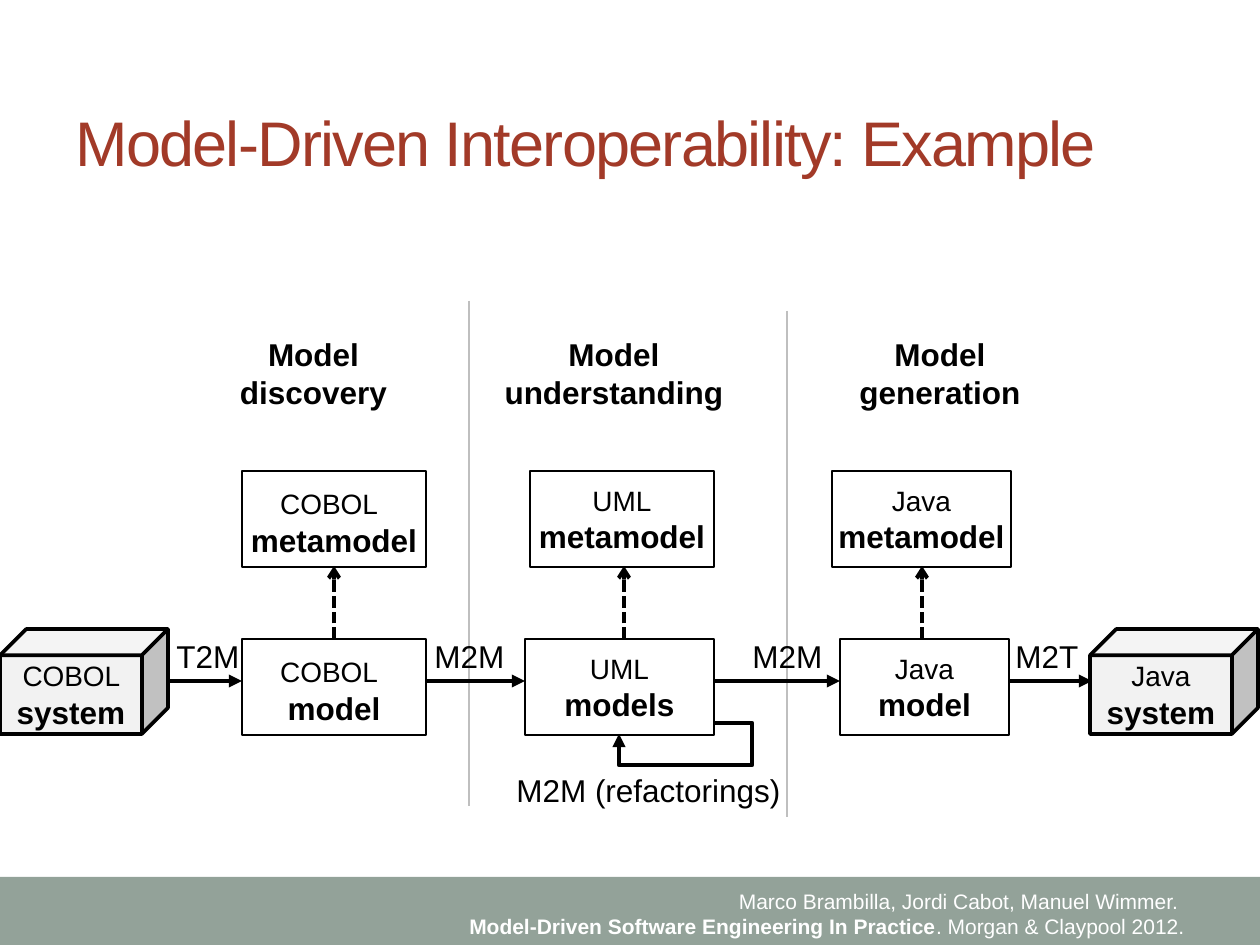
from dataclasses import dataclass

from lxml import etree
from pptx import Presentation
from pptx.dml.color import RGBColor
from pptx.enum.dml import MSO_LINE
from pptx.enum.shapes import MSO_CONNECTOR, MSO_SHAPE
from pptx.enum.text import MSO_ANCHOR, PP_ALIGN
from pptx.oxml.ns import qn
from pptx.util import Pt

RECTANGLE, CUBE = MSO_SHAPE.RECTANGLE, MSO_SHAPE.CUBE
STRAIGHT = MSO_CONNECTOR.STRAIGHT
DASHED = MSO_LINE.SQUARE_DOT
LEFT, CENTER, RIGHT = PP_ALIGN.LEFT, PP_ALIGN.CENTER, PP_ALIGN.RIGHT
TOP, MIDDLE = MSO_ANCHOR.TOP, MSO_ANCHOR.MIDDLE
EMU_PER_PX = 914400 / 126


@dataclass(frozen=True)
class Theme:
    font: str = "Arial"
    ink: str = "000000"
    paper: str = "FFFFFF"
    title: str = "A23A28"
    band: str = "93A299"
    divider: str = "BFBFBF"
    cube: str = "F2F2F2"
    title_size: int = 36
    gap_size: int = 20
    label_size: int = 18
    name_size: int = 16
    footer_size: int = 12


def px(length):
    return round(length * EMU_PER_PX)


def color(value):
    return RGBColor.from_string(value)


def write(frame, paragraphs, *, font, size, ink, align=LEFT, anchor=TOP,
          bold=False, wrap=True, spacing=None):
    frame.word_wrap = wrap
    frame.vertical_anchor = anchor
    for index, spans in enumerate(paragraphs):
        para = frame.add_paragraph() if index else frame.paragraphs[0]
        para.alignment = align
        for text, span_size, span_bold in spans:
            span = para.add_run()
            span.text = text
            span.font.name = font
            span.font.size = Pt(span_size or size)
            span.font.bold = bold if span_bold is None else span_bold
            span.font.color.rgb = color(ink)
            if spacing is not None:
                span.font._element.set("spc", str(spacing))


def plain(text, size=None, bold=None):
    return (text, size, bold)


class Page:
    def __init__(self, slide, theme):
        self.shapes = slide.shapes
        self.theme = theme

    def text(self, left, top, width, height, paragraphs, **style):
        box = self.shapes.add_textbox(px(left), px(top), px(width), px(height))
        settings = {"font": self.theme.font, "size": self.theme.label_size,
                    "ink": self.theme.ink, **style}
        write(box.text_frame, paragraphs, **settings)

    def shape(self, kind, left, top, width, height, fill, outline=None):
        shape = self.shapes.add_shape(kind, px(left), px(top), px(width), px(height))
        shape.shadow.inherit = False
        shape.fill.solid()
        shape.fill.fore_color.rgb = color(fill)
        if outline:
            shape.line.color.rgb = color(self.theme.ink)
            shape.line.width = Pt(outline)
        else:
            shape.line.fill.background()
        return shape

    def node(self, left, top, width, paragraphs):
        shape = self.shape(RECTANGLE, left, top, width, 96, self.theme.paper, 1.5)
        write(shape.text_frame, paragraphs, font=self.theme.font,
              size=self.theme.label_size, ink=self.theme.ink,
              align=CENTER, anchor=MIDDLE, wrap=False)

    def system(self, left, language):
        shape = self.shape(CUBE, left, 629, 168, 105, self.theme.cube, 2.08)
        spans = [plain(language + " ", self.theme.name_size),
                 plain("system", bold=True)]
        write(shape.text_frame, [spans], font=self.theme.font,
              size=self.theme.label_size, ink=self.theme.ink,
              align=CENTER, anchor=MIDDLE)

    def stroke(self, item, ink, width, head=None):
        item.line.color.rgb = color(ink)
        item.line.width = Pt(width)
        if head:
            etree.SubElement(item.line._get_or_add_ln(), qn("a:tailEnd"), type=head)

    def line(self, start, end, ink, width, head=None, dash=None):
        line = self.shapes.add_connector(STRAIGHT, *map(px, start + end))
        line.line.color.rgb = color(ink)
        if dash:
            line.line.dash_style = dash
        self.stroke(line, ink, width, head)
        etree.SubElement(line._element.spPr, qn("a:effectLst"))

    def loop(self, points):
        builder = self.shapes.build_freeform(*map(px, points[0]))
        builder.add_line_segments([tuple(map(px, point)) for point in points[1:]],
                                  close=False)
        shape = builder.convert_to_shape()
        shape.shadow.inherit = False
        shape.fill.background()
        self.stroke(shape, self.theme.ink, 2.5, "triangle")


def main():
    theme = Theme()
    deck = Presentation()
    deck.slide_width, deck.slide_height = px(1260), px(945)
    page = Page(deck.slides.add_slide(deck.slide_layouts[6]), theme)

    page.shape(RECTANGLE, 0, 877, 1260, 69, theme.band)
    page.text(370, 882, 827, 63,
              [[plain("Marco Brambilla, Jordi Cabot, Manuel Wimmer. ")],
               [plain("Model-Driven Software Engineering In Practice", bold=True),
                plain(". Morgan & Claypool 2012.")]],
              size=theme.footer_size, ink=theme.paper, align=RIGHT)
    page.text(63, 73, 1134, 136, [[plain("Model-Driven Interoperability: Example")]],
              size=theme.title_size, ink=theme.title, anchor=MIDDLE, spacing=-100)

    for x, top, bottom in ((469, 301, 806), (787, 311, 817)):
        page.line((x, top), (x, bottom), theme.divider, 1)

    for left, width, stage in ((217, 193, "Model discovery"),
                               (483, 262, "Model understanding"),
                               (809, 262, "Model generation")):
        page.text(left, 329, width, 89, [[plain(stage)]], bold=True, align=CENTER)

    gap = [plain(" ", theme.gap_size)]
    columns = (
        ("COBOL", gap, 334, (242, 184), (242, 184), "model"),
        ("UML", [], 624, (530, 184), (525, 189), "models"),
        ("Java", [], 922, (832, 179), (840, 169), "model"),
    )
    for language, tail, axis, upper, lower, model in columns:
        name = [plain(language, theme.name_size)] + tail
        for (left, width), top, noun in ((upper, 471, "metamodel"),
                                         (lower, 639, model)):
            page.node(left, top, width, [name, [plain(noun, bold=True)]])
        page.line((axis, 639), (axis, 566), theme.ink, 2.25, "arrow", DASHED)

    page.system(0, "COBOL")
    page.system(1090, "Java")

    transformations = (
        ("T2M", 168, 242, 164, 95),
        ("M2M", 426, 525, 422, 116),
        ("M2M", 714, 840, 740, 116),
        ("M2T", 1009, 1092, 1003, 95),
    )
    for label, start, end, left, width in transformations:
        page.line((start, 681), (end, 681), theme.ink, 2.5, "triangle")
        page.text(left, 631, width, 50, [[plain(label)]])

    page.loop([(714, 723), (752, 723), (752, 765), (619, 765), (619, 734)])
    page.text(504, 765, 305, 50, [[plain("M2M (refactorings)")]])

    deck.save("out.pptx")


if __name__ == "__main__":
    main()
